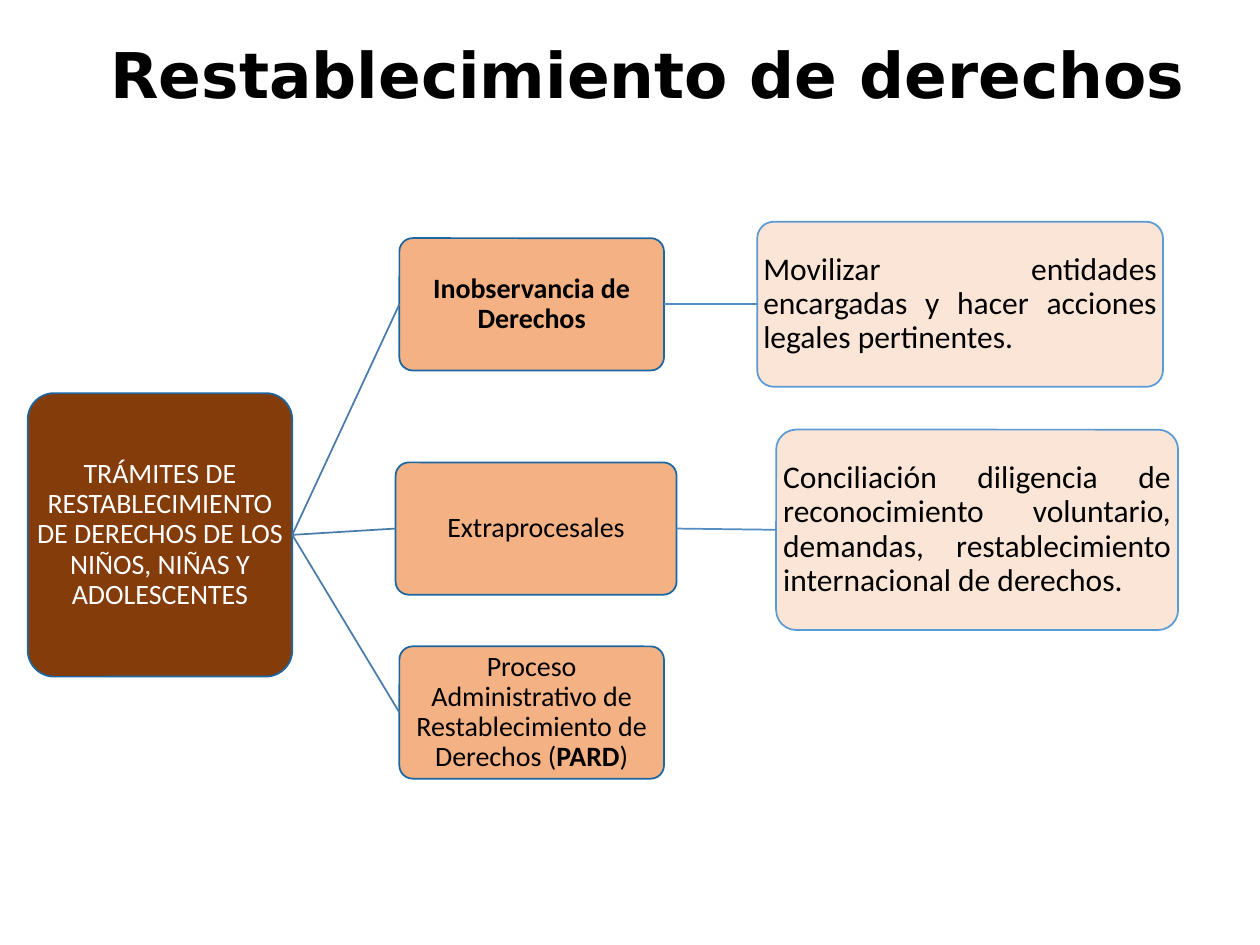
from dataclasses import dataclass

from lxml import etree
from pptx import Presentation
from pptx.dml.color import RGBColor
from pptx.enum.shapes import MSO_CONNECTOR, MSO_SHAPE
from pptx.enum.text import MSO_ANCHOR, PP_ALIGN
from pptx.oxml.ns import qn
from pptx.util import Inches, Pt

ROUNDED = MSO_SHAPE.ROUNDED_RECTANGLE
STRAIGHT = MSO_CONNECTOR.STRAIGHT
TOP, MIDDLE = MSO_ANCHOR.TOP, MSO_ANCHOR.MIDDLE
CENTER, JUSTIFY = PP_ALIGN.CENTER, PP_ALIGN.JUSTIFY
LEFT_SIDE, RIGHT_SIDE = 1, 3


@dataclass(frozen=True)
class Theme:
    title_font: str = "DejaVu Sans"
    body_font: str = "Calibri"
    title_size: int = 36
    node_size: int = 16
    detail_size: int = 18
    line_width: int = 1
    black: str = "000000"
    white: str = "FFFFFF"
    root_fill: str = "843C0B"
    branch_fill: str = "F4B183"
    detail_fill: str = "FBE5D6"
    node_line: str = "1C67A1"
    detail_line: str = "5B9BD5"
    branch_link: str = "497CAB"
    detail_link: str = "538DC1"


class DiagramSlide:
    """Draws a styled tree diagram on one slide."""

    def __init__(self, slide, theme):
        self.slide = slide
        self.theme = theme

    def set_text(self, frame, runs, font_name, size, color, align, anchor):
        frame.word_wrap = True
        frame.vertical_anchor = anchor
        paragraph = frame.paragraphs[0]
        paragraph.alignment = align
        paragraph.line_spacing = 0.9
        font = paragraph.font
        font.name, font.size = font_name, Pt(size)
        font.color.rgb = RGBColor.from_string(color)
        font.bold = all(bold for _, bold in runs)
        for text, bold in runs:
            run = paragraph.add_run()
            run.text = text
            if bold != font.bold:
                run.font.bold = bold

    def title(self, text, box):
        shape = self.slide.shapes.add_textbox(*map(Inches, box))
        theme = self.theme
        self.set_text(shape.text_frame, [(text, True)], theme.title_font,
                      theme.title_size, theme.black, CENTER, TOP)

    def node(self, runs, box, fill, line, size, color, align=CENTER):
        shape = self.slide.shapes.add_shape(ROUNDED, *map(Inches, box))
        shape.adjustments[0] = 0.1
        shape.shadow.inherit = False
        shape.fill.solid()
        shape.fill.fore_color.rgb = RGBColor.from_string(fill)
        shape.line.color.rgb = RGBColor.from_string(line)
        shape.line.width = Pt(self.theme.line_width)
        frame = shape.text_frame
        frame.margin_left = frame.margin_right = Inches(0.01)
        frame.margin_top = frame.margin_bottom = Inches(0.01)
        self.set_text(frame, runs, self.theme.body_font, size, color, align, MIDDLE)
        return shape

    def root(self, text, box):
        theme = self.theme
        return self.node([(text, False)], box, theme.root_fill, theme.node_line,
                         theme.node_size, theme.white)

    def branch(self, runs, box):
        theme = self.theme
        return self.node(runs, box, theme.branch_fill, theme.node_line,
                         theme.node_size, theme.black)

    def detail(self, text, box):
        theme = self.theme
        return self.node([(text, False)], box, theme.detail_fill, theme.detail_line,
                         theme.detail_size, theme.black, JUSTIFY)

    def link(self, parent, child, color):
        connector = self.slide.shapes.add_connector(STRAIGHT, 0, 0, 0, 0)
        connector.begin_connect(parent, RIGHT_SIDE)
        connector.end_connect(child, LEFT_SIDE)
        connector.line.color.rgb = RGBColor.from_string(color)
        connector.line.width = Pt(self.theme.line_width)
        etree.SubElement(connector._element.spPr, qn("a:effectLst"))


def main():
    presentation = Presentation()
    presentation.slide_width, presentation.slide_height = Inches(10), Inches(7.5)
    theme = Theme()
    diagram = DiagramSlide(
        presentation.slides.add_slide(presentation.slide_layouts[6]), theme)

    diagram.title("Restablecimiento de derechos", (0.69, 0.3, 8.9, 0.92))
    root = diagram.root(
        "TRÁMITES DE RESTABLECIMIENTO DE DERECHOS DE LOS NIÑOS, NIÑAS Y ADOLESCENTES",
        (0.22, 3.12, 2.1, 2.25))

    branches = [
        ([("Inobservancia de Derechos", True)], (3.17, 1.89, 2.1, 1.05),
         "Movilizar entidades encargadas y hacer acciones legales pertinentes.",
         (6.01, 1.76, 3.22, 1.31)),
        ([("Extraprocesales", False)], (3.14, 3.67, 2.23, 1.05),
         "Conciliación diligencia de reconocimiento voluntario, demandas, "
         "restablecimiento internacional de derechos.",
         (6.16, 3.41, 3.19, 1.59)),
        ([("Proceso Administrativo de Restablecimiento de Derechos (", False),
          ("PARD", True), (")", False)], (3.17, 5.13, 2.1, 1.05), None, None),
    ]
    for runs, branch_box, detail_text, detail_box in branches:
        branch = diagram.branch(runs, branch_box)
        diagram.link(root, branch, theme.branch_link)
        if detail_text:
            detail = diagram.detail(detail_text, detail_box)
            diagram.link(branch, detail, theme.detail_link)

    presentation.save("out.pptx")


if __name__ == "__main__":
    main()
